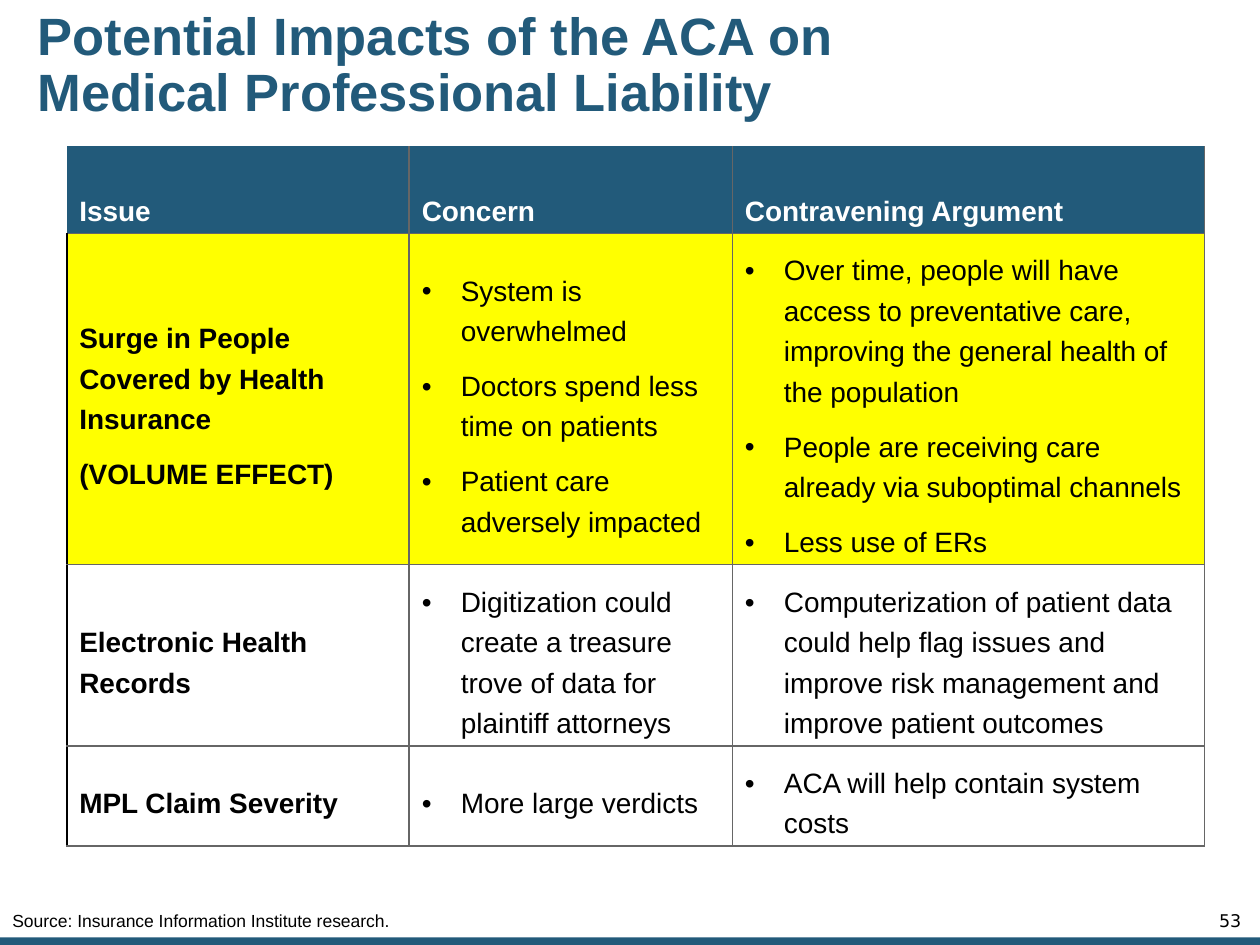
from pptx import Presentation
from pptx.dml.color import RGBColor
from pptx.enum.shapes import MSO_SHAPE
from pptx.enum.text import MSO_ANCHOR, MSO_AUTO_SIZE, PP_ALIGN
from pptx.oxml.ns import qn
from pptx.util import Inches, Pt
from lxml.etree import SubElement

TEAL = RGBColor(0x22, 0x5A, 0x7A)
YELLOW = RGBColor(0xFF, 0xFF, 0x00)
WHITE = RGBColor(0xFF, 0xFF, 0xFF)
BLACK = RGBColor(0x00, 0x00, 0x00)
GREY = RGBColor(0x66, 0x66, 0x66)

WIDE, HIGH = Inches(10), Inches(7.5)
COLS = (0.301, 0.284, 0.415)         # shares of the table's width
ROWS = (0.125, 0.473, 0.26, 0.142)   # shares of the table's height

HEADS = ("Issue", "Concern", "Contravening Argument")
ISSUES = (
    (("Surge in People Covered by Health Insurance", "(VOLUME EFFECT)"),
     ("System is overwhelmed", "Doctors spend less time on patients",
      "Patient care adversely impacted"),
     ("Over time, people will have access to preventative care, "
      "improving the general health of the population",
      "People are receiving care already via suboptimal channels",
      "Less use of ERs")),
    (("Electronic Health Records",),
     ("Digitization could create a treasure trove of data for "
      "plaintiff attorneys",),
     ("Computerization of patient data could help flag issues and "
      "improve risk management and improve patient outcomes",)),
    (("MPL Claim Severity",),
     ("More large verdicts",),
     ("ACA will help contain system costs",)),
)


def share(left, top, width, height):
    """Turn shares of the slide into a box of lengths."""
    return (int(WIDE * left), int(HIGH * top),
            int(WIDE * width), int(HIGH * height))


def write(frame, lines, size=16, color=BLACK, bold=False, font="Arial",
          align=PP_ALIGN.LEFT, leading=1.0, gap=0, bullet=False):
    for i, line in enumerate(lines):
        para = frame.paragraphs[0] if i == 0 else frame.add_paragraph()
        para.text = line
        para.alignment = align
        para.line_spacing = leading
        para.space_before = Pt(gap if i else 0)
        if bullet:
            props = para._p.get_or_add_pPr()
            props.set("marL", str(Inches(0.31)))
            props.set("indent", str(-Inches(0.31)))
            SubElement(props, qn("a:buFont")).set("typeface", "Arial")
            SubElement(props, qn("a:buChar")).set("char", "•")
        for run in para.runs:
            run.font.size, run.font.bold = Pt(size), bold
            run.font.name, run.font.color.rgb = font, color


def rule(cell, **sides):
    """Draw cell borders, given as L, R, T, B in that order."""
    props = cell._tc.get_or_add_tcPr()
    for side, color in sides.items():
        line = SubElement(props, qn(f"a:ln{side}"), w=str(Pt(1)))
        if color is None:
            SubElement(line, qn("a:noFill"))
        else:
            fill = SubElement(line, qn("a:solidFill"))
            SubElement(fill, qn("a:srgbClr"), val=str(color))


def add_title(slide, box):
    title = slide.shapes.title
    title.left, title.top, title.width, title.height = box
    frame = title.text_frame
    frame.auto_size = MSO_AUTO_SIZE.NONE
    frame.word_wrap = True
    frame.vertical_anchor = MSO_ANCHOR.MIDDLE
    frame.margin_left = frame.margin_right = Inches(0.05)
    frame.margin_top = frame.margin_bottom = Inches(0.05)
    write(frame, ["Potential Impacts of the ACA on\vMedical Professional Liability"],
          size=30, color=TEAL, bold=True, leading=0.9)


def add_grid(slide, box):
    table = slide.shapes.add_table(len(ROWS), len(COLS), *box).table
    table.horz_banding = False
    for col, part in zip(table.columns, COLS):
        col.width = int(box[2] * part)
    for row, part in zip(table.rows, ROWS):
        row.height = int(box[3] * part)
    body = [[(head,) for head in HEADS], *ISSUES]
    for r, row in enumerate(body):
        for c, lines in enumerate(row):
            cell, head = table.cell(r, c), r == 0
            edge = None if head else BLACK
            rule(cell, L=GREY if c else edge, R=GREY,
                 T=None if head else GREY, B=GREY)
            cell.fill.solid()
            cell.fill.fore_color.rgb = (TEAL, YELLOW, WHITE, WHITE)[r]
            cell.margin_left = cell.margin_right = Inches(0.1)
            cell.margin_top, cell.margin_bottom = Inches(0.1), Inches(0.05)
            cell.vertical_anchor = MSO_ANCHOR.BOTTOM if head else MSO_ANCHOR.MIDDLE
            write(cell.text_frame, lines, color=WHITE if head else BLACK,
                  bold=head or c == 0, leading=1.0 if head else 1.3,
                  gap=8.3, bullet=not head and c > 0)


def add_note(slide, box, text, **style):
    frame = slide.shapes.add_textbox(*box).text_frame
    frame.word_wrap = True
    frame.vertical_anchor = MSO_ANCHOR.MIDDLE
    write(frame, [text], size=10, **style)


def add_bar(slide, box):
    bar = slide.shapes.add_shape(MSO_SHAPE.RECTANGLE, *box)
    bar.shadow.inherit = False
    bar.fill.solid()
    bar.fill.fore_color.rgb = TEAL
    bar.line.fill.background()


def main():
    deck = Presentation()
    deck.slide_width, deck.slide_height = WIDE, HIGH
    slide = deck.slides.add_slide(deck.slide_layouts[5])
    add_bar(slide, share(0, 0.992, 1, 0.008))
    add_grid(slide, share(0.053, 0.155, 0.903, 0.738))
    add_note(slide, share(0, 0.956, 0.383, 0.036),
             "Source: Insurance Information Institute research.")
    add_note(slide, share(0.92, 0.956, 0.075, 0.036), "53",
             font="DejaVu Sans", align=PP_ALIGN.RIGHT)
    add_title(slide, share(0.025, 0.011, 0.823, 0.119))
    deck.save("out.pptx")


if __name__ == "__main__":
    main()
